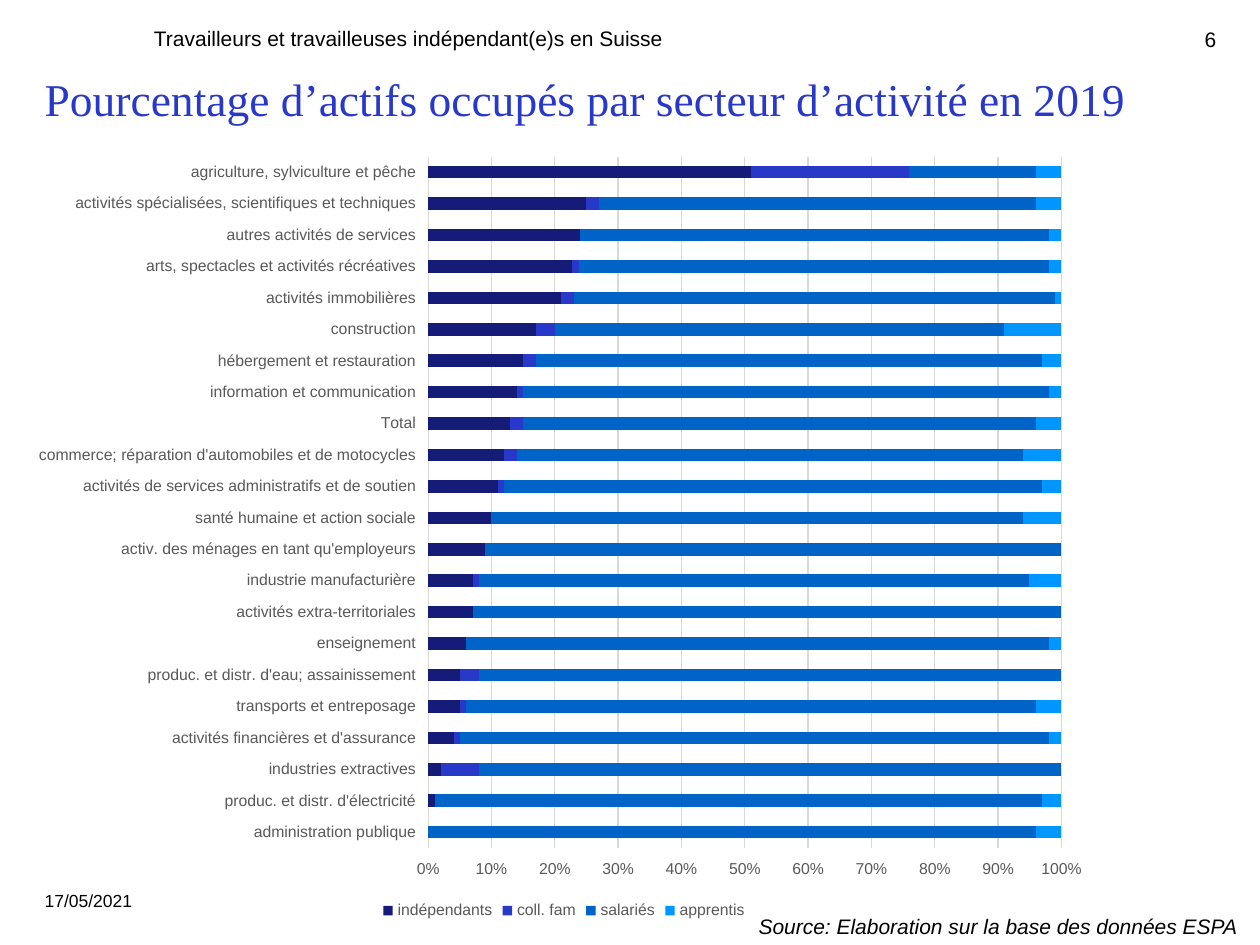
from dataclasses import dataclass

from lxml import etree
from pptx import Presentation
from pptx.chart.data import CategoryChartData
from pptx.dml.color import RGBColor
from pptx.enum.chart import XL_CHART_TYPE, XL_LEGEND_POSITION, XL_TICK_LABEL_POSITION, XL_TICK_MARK
from pptx.enum.text import MSO_ANCHOR, PP_ALIGN
from pptx.oxml.ns import qn
from pptx.util import Pt

BAR_STACKED_100 = XL_CHART_TYPE.BAR_STACKED_100
LEGEND_BOTTOM = XL_LEGEND_POSITION.BOTTOM
LABELS_LOW = XL_TICK_LABEL_POSITION.LOW
NO_TICK = XL_TICK_MARK.NONE
ANCHOR_TOP = MSO_ANCHOR.TOP
LEFT, RIGHT = PP_ALIGN.LEFT, PP_ALIGN.RIGHT

SERIES_NAMES = ("indépendants", "coll. fam", "salariés", "apprentis")
SECTORS = [
    ("administration publique", None, None, 96, 4),
    ("produc. et distr. d'électricité", 1, None, 95, 3),
    ("industries extractives", 2, 6, 92, None),
    ("activités financières et d'assurance", 4, 1, 93, 2),
    ("transports et entreposage", 5, 1, 91, 4),
    ("produc. et distr. d'eau; assainissement", 5, 3, 92, 0),
    ("enseignement", 6, 0, 92, 2),
    ("activités extra-territoriales", 7, None, 93, None),
    ("industrie manufacturière", 7, 1, 86, 5),
    ("activ. des ménages en tant qu'employeurs", 9, 0, 91, None),
    ("santé humaine et action sociale", 10, 0, 84, 6),
    ("activités de services administratifs et de soutien", 11, 1, 85, 3),
    ("commerce; réparation d'automobiles et de motocycles", 12, 2, 80, 6),
    ("Total", 13, 2, 81, 4),
    ("information et communication", 14, 1, 83, 2),
    ("hébergement et restauration", 15, 2, 80, 3),
    ("construction", 17, 3, 71, 9),
    ("activités immobilières", 21, 2, 76, 1),
    ("arts, spectacles et activités récréatives", 23, 1, 75, 2),
    ("autres activités de services", 24, 0, 74, 2),
    ("activités spécialisées, scientifiques et techniques", 25, 2, 69, 4),
    ("agriculture, sylviculture et pêche", 51, 25, 20, 4),
]


@dataclass(frozen=True)
class Theme:
    """Colours, fonts and type sizes of the slide."""

    text: str = "000000"
    title: str = "2838C8"
    chart_text: str = "595959"
    grid: str = "D9D9D9"
    series: tuple = ("141C78", "2838C8", "0063C8", "0096FF")
    body_font: str = "Arial"
    title_font: str = "Times New Roman"
    title_size: int = 26
    body_size: int = 12
    date_size: int = 10
    chart_size: int = 9


class SlideBuilder:
    """Adds styled elements to the current slide."""

    def __init__(self, slide, theme):
        self.slide = slide
        self.theme = theme

    def style_font(self, font, size, color, name):
        font.size = Pt(size)
        font.name = name
        font.color.rgb = RGBColor.from_string(color)

    def text(self, box, content, size, color=None, name=None, align=LEFT,
             italic=False, wrap=True, top_inset=0):
        shape = self.slide.shapes.add_textbox(*map(Pt, box))
        frame = shape.text_frame
        frame.word_wrap = wrap
        frame.vertical_anchor = ANCHOR_TOP
        frame.margin_left = frame.margin_right = frame.margin_bottom = 0
        frame.margin_top = Pt(top_inset)
        paragraph = frame.paragraphs[0]
        paragraph.alignment = align
        run = paragraph.add_run()
        run.text = content
        run.font.italic = italic
        self.style_font(run.font, size, color or self.theme.text, name or self.theme.body_font)

    def axis(self, axis):
        axis.major_tick_mark = axis.minor_tick_mark = NO_TICK
        axis.tick_label_position = LABELS_LOW
        self.style_font(axis.tick_labels.font, self.theme.chart_size,
                        self.theme.chart_text, self.theme.body_font)

    def line(self, line):
        line.width = Pt(0.75)
        line.color.rgb = RGBColor.from_string(self.theme.grid)

    def plot_area(self, chart, **fractions):
        plot_area = chart.plots[0]._element.getparent()
        for layout in plot_area.findall(qn("c:layout")):
            plot_area.remove(layout)
        layout = etree.Element(qn("c:layout"))
        manual = etree.SubElement(layout, qn("c:manualLayout"))
        settings = {"layoutTarget": "inner", "xMode": "edge", "yMode": "edge", **fractions}
        for tag, value in settings.items():
            etree.SubElement(manual, qn(f"c:{tag}")).set("val", str(value))
        plot_area.insert(0, layout)

    def stacked_bars(self, box, names, rows):
        theme = self.theme
        categories, *columns = zip(*rows)
        data = CategoryChartData(number_format="0")
        data.categories = categories
        for name, values in zip(names, columns):
            data.add_series(name, values)
        chart = self.slide.shapes.add_chart(BAR_STACKED_100, *map(Pt, box), data).chart
        chart.has_title = False
        self.style_font(chart.font, theme.chart_size, theme.chart_text, theme.body_font)
        plot = chart.plots[0]
        plot.gap_width, plot.overlap = 150, 100
        plot.vary_by_categories = False
        for series, color in zip(plot.series, theme.series):
            series.format.fill.solid()
            series.format.fill.fore_color.rgb = RGBColor.from_string(color)
        self.axis(chart.category_axis)
        self.line(chart.category_axis.format.line)
        value_axis = chart.value_axis
        self.axis(value_axis)
        value_axis.minimum_scale, value_axis.maximum_scale, value_axis.major_unit = 0, 1, 0.1
        value_axis.tick_labels.number_format = "0%"
        value_axis.tick_labels.number_format_is_linked = False
        value_axis.format.line.fill.background()
        value_axis.has_major_gridlines = True
        self.line(value_axis.major_gridlines.format.line)
        chart.has_legend = True
        chart.legend.position = LEGEND_BOTTOM
        chart.legend.include_in_layout = False
        self.style_font(chart.legend.font, theme.chart_size, theme.chart_text, theme.body_font)
        self.plot_area(chart, x=0.374, y=0.02, w=0.588, h=0.882)


def main():
    theme = Theme()
    presentation = Presentation()
    presentation.slide_width, presentation.slide_height = Pt(720), Pt(540)
    slide = presentation.slides.add_slide(presentation.slide_layouts[6])
    builder = SlideBuilder(slide, theme)
    builder.text((88, 14.5, 535.5, 37.5),
                 "Travailleurs et travailleuses indépendant(e)s en Suisse", theme.body_size)
    builder.text((25.5, 37.5, 680, 43),
                 "Pourcentage d’actifs occupés par secteur d’activité en 2019",
                 theme.title_size, theme.title, theme.title_font, top_inset=3)
    builder.text((25.5, 508.5, 168, 31.5), "17/05/2021", theme.date_size)
    builder.text((630, 15, 65, 37.5), "6", theme.body_size, align=RIGHT)
    builder.stacked_bars((14.5, 80.5, 615.5, 448), SERIES_NAMES, SECTORS)
    builder.text((433.5, 522, 276.5, 13), "Source: Elaboration sur la base des données ESPA",
                 theme.body_size, italic=True, wrap=False)
    presentation.save("out.pptx")


if __name__ == "__main__":
    main()
